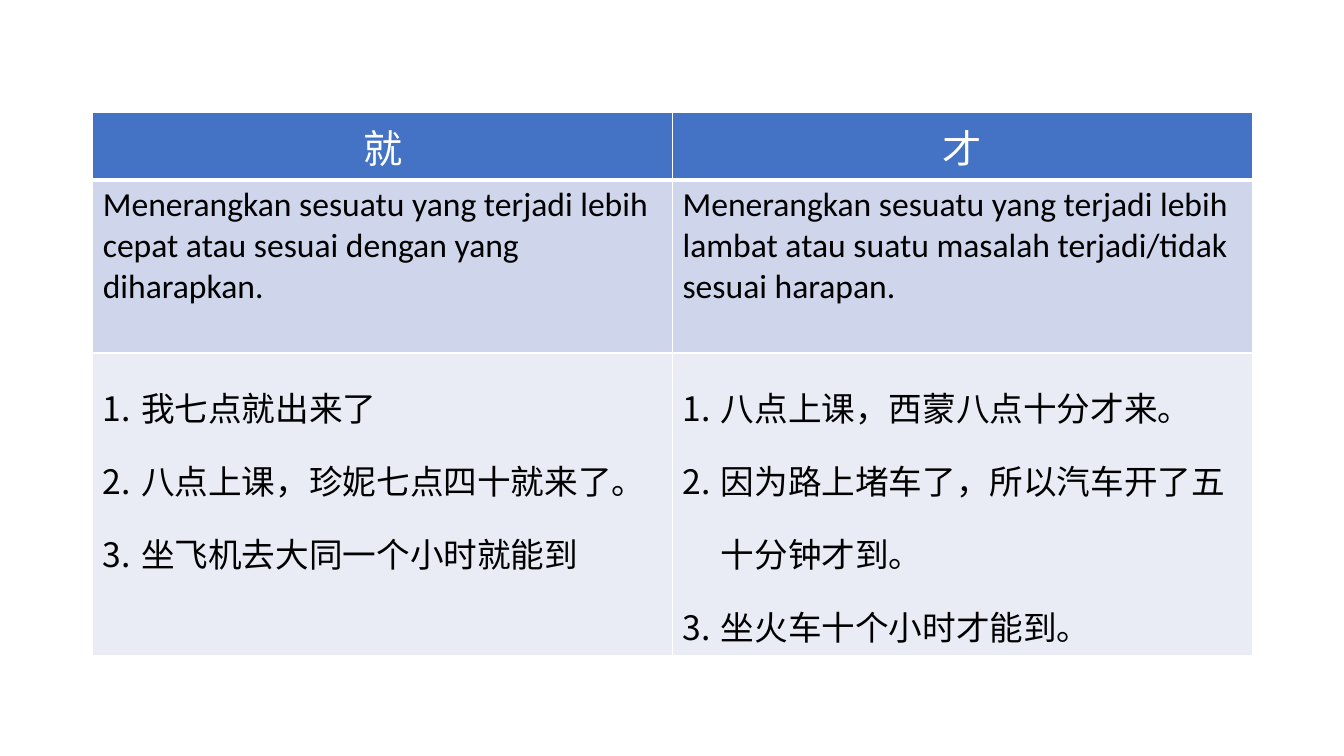
from lxml import etree
from pptx import Presentation
from pptx.dml.color import RGBColor
from pptx.enum.text import PP_ALIGN
from pptx.oxml.ns import qn
from pptx.util import Inches, Pt

CENTER, LEFT = PP_ALIGN.CENTER, PP_ALIGN.LEFT
FONT = "Calibri"
COLORS = {"header": "4472C4", "meaning": "CFD5EA", "examples": "E9EBF5",
          "white": "FFFFFF", "black": "000000"}
WORDS = ["就", "才"]
MEANINGS = [
    "Menerangkan sesuatu yang terjadi lebih cepat atau sesuai dengan yang diharapkan.",
    "Menerangkan sesuatu yang terjadi lebih lambat atau suatu masalah terjadi/tidak sesuai harapan.",
]
EXAMPLES = [
    ["我七点就出来了", "八点上课，珍妮七点四十就来了。", "坐飞机去大同一个小时就能到"],
    ["八点上课，西蒙八点十分才来。", "因为路上堵车了，所以汽车开了五十分钟才到。", "坐火车十个小时才能到。"],
]
ROW_HEIGHTS = [0.51, 1.72, 2.18]


def add_borders(cell, top, bottom):
    """Draw white borders, with widths in points for top and bottom."""
    properties = cell._tc.get_or_add_tcPr()
    for side, width in (("L", 1), ("R", 1), ("T", top), ("B", bottom)):
        line = etree.SubElement(properties, qn(f"a:ln{side}"), w=str(Pt(width)))
        fill = etree.SubElement(line, qn("a:solidFill"))
        etree.SubElement(fill, qn("a:srgbClr"), val=COLORS["white"])


def number_paragraph(paragraph):
    """Give a paragraph an automatic number and a hanging indent."""
    paragraph.line_spacing = 1.5
    properties = paragraph._p.get_or_add_pPr()
    properties.set("marL", str(Inches(0.38)))
    properties.set("indent", str(Inches(-0.38)))
    etree.SubElement(properties, qn("a:buFont"), typeface="+mj-lt")
    etree.SubElement(properties, qn("a:buAutoNum"), type="arabicPeriod")


def fill_cell(cell, lines, fill, color="black", size=24, align=LEFT,
              numbered=False, top=1, bottom=1):
    """Style a cell and write its lines as paragraphs."""
    add_borders(cell, top, bottom)
    cell.fill.solid()
    cell.fill.fore_color.rgb = RGBColor.from_string(COLORS[fill])
    for index, line in enumerate(lines):
        frame = cell.text_frame
        paragraph = frame.add_paragraph() if index else frame.paragraphs[0]
        paragraph.alignment = align
        if numbered:
            number_paragraph(paragraph)
        run = paragraph.add_run()
        run.text = line
        run.font.name = FONT
        run.font.size = Pt(size)
        run.font.color.rgb = RGBColor.from_string(COLORS[color])


def add_comparison(slide):
    """Add the table that compares the two words."""
    height = Inches(4.71)
    frame = slide.shapes.add_table(len(ROW_HEIGHTS), len(WORDS), Inches(0.92),
                                   Inches(1.12), Inches(11.5), height)
    table = frame.table
    table.first_row = table.horz_banding = False
    for row, row_height in zip(table.rows, ROW_HEIGHTS):
        row.height = Inches(row_height)
    frame.height = height
    for column, (word, meaning, examples) in enumerate(zip(WORDS, MEANINGS, EXAMPLES)):
        fill_cell(table.cell(0, column), [word], "header", color="white",
                  size=28, align=CENTER, bottom=3)
        fill_cell(table.cell(1, column), [meaning], "meaning", top=3)
        fill_cell(table.cell(2, column), examples, "examples", numbered=True)


def main():
    """Build and save the slide."""
    presentation = Presentation()
    presentation.slide_width = Inches(13.33)
    presentation.slide_height = Inches(7.5)
    slide = presentation.slides.add_slide(presentation.slide_layouts[6])
    add_comparison(slide)
    presentation.save("out.pptx")


if __name__ == "__main__":
    main()
